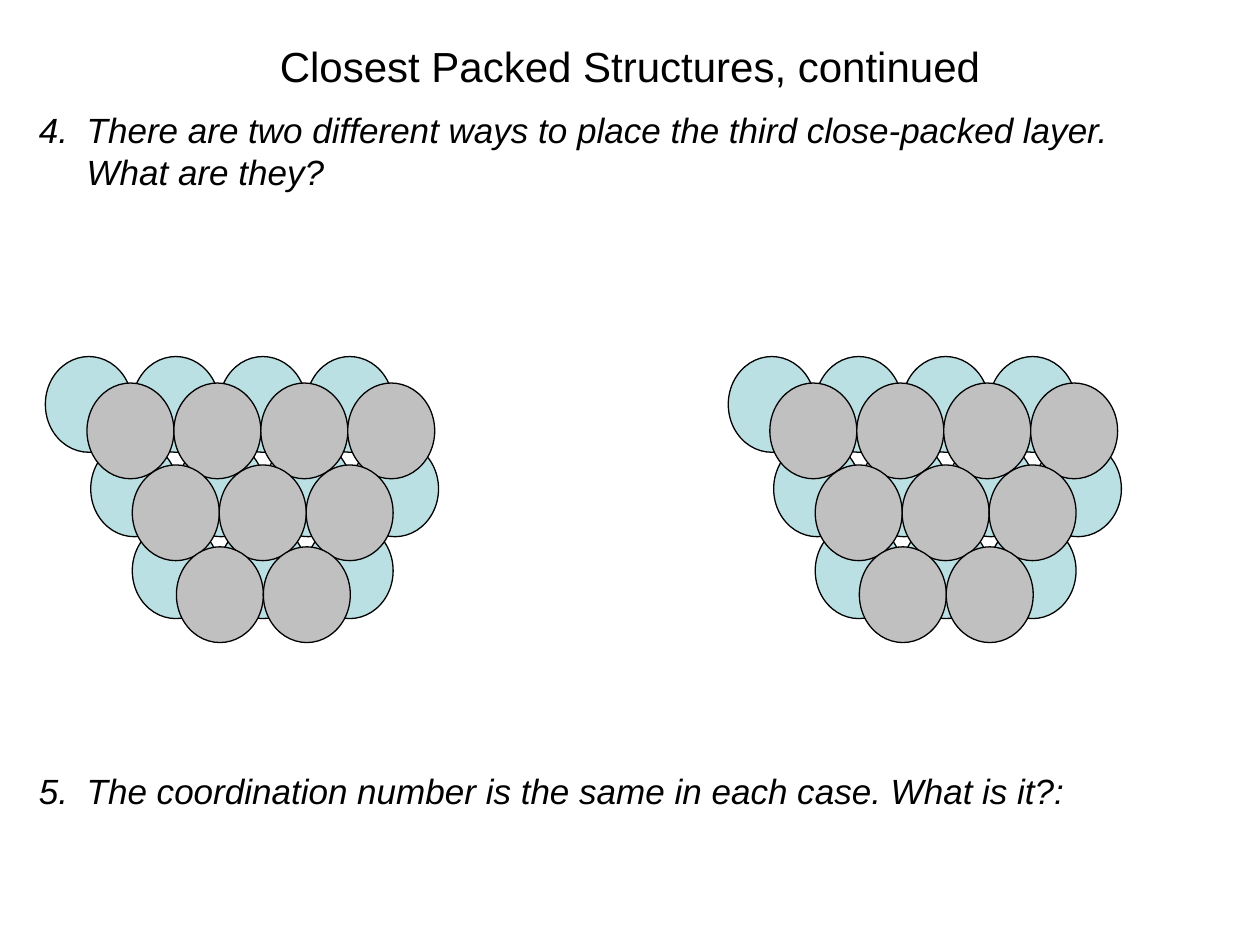
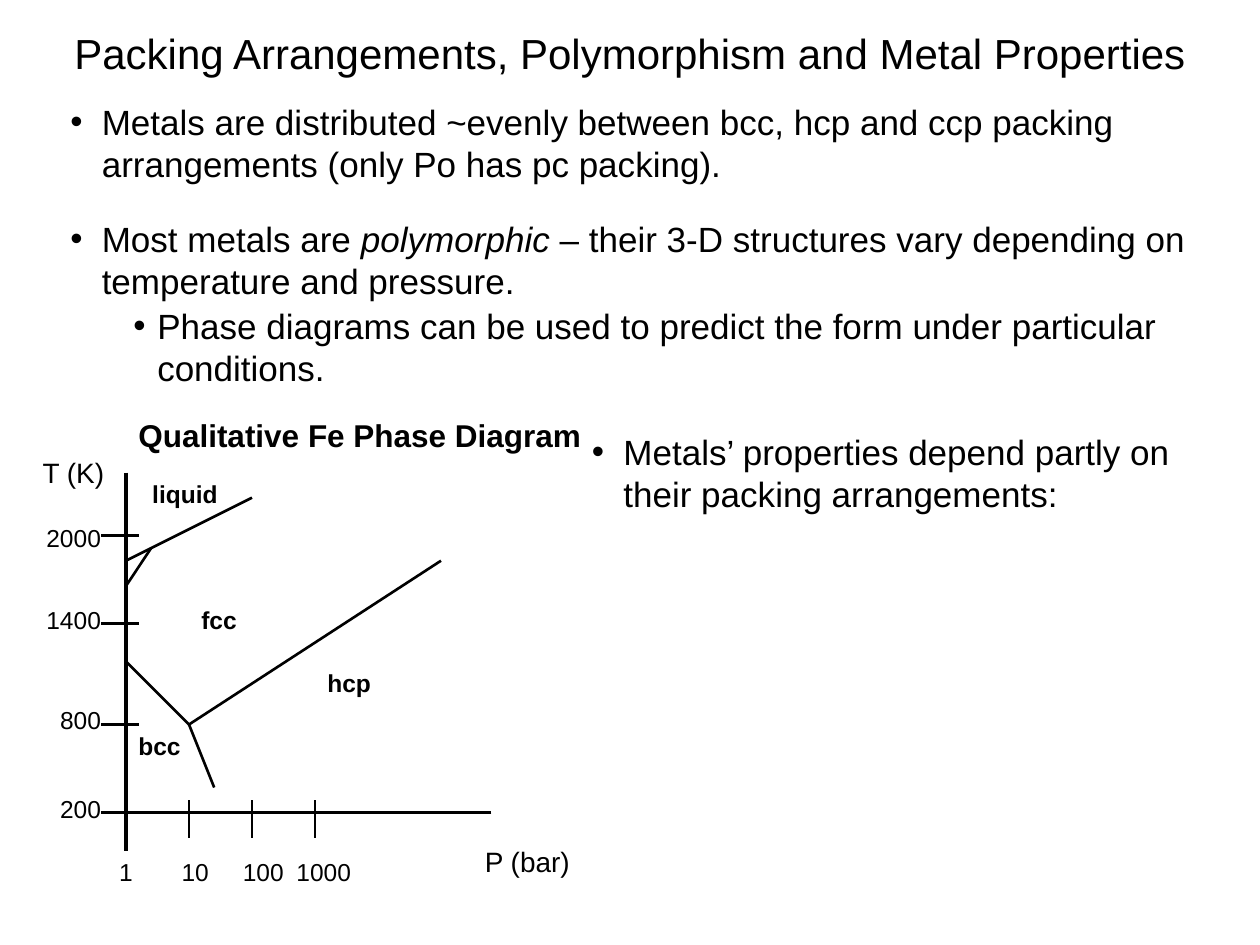
"""Build two slides on closest packed structures and metal polymorphism."""
from dataclasses import dataclass

from lxml.etree import SubElement
from pptx import Presentation
from pptx.dml.color import RGBColor
from pptx.enum.shapes import MSO_CONNECTOR, MSO_SHAPE
from pptx.enum.text import MSO_ANCHOR, PP_ALIGN
from pptx.oxml.ns import qn
from pptx.shapes.group import GroupShape
from pptx.slide import Slide
from pptx.text.text import TextFrame, _Paragraph
from pptx.util import Inches, Pt

COLORS = {"ink": "000000", "lower": "BBE0E3", "upper": "C0C0C0"}
FONT = "Arial"
SPHERE_WIDTH, SPHERE_HEIGHT = 0.69, 0.76
AXIS_X, AXIS_Y = 1, 6.45


@dataclass(frozen=True)
class Box:
    left: float
    top: float
    width: float
    height: float


@dataclass(frozen=True)
class Item:
    text: str
    before: float = 2
    emphasis: str = ""
    level: int = 0
    margin: float = 0.25
    hanging: float = 0.25
    italic: bool = False
    numbered_from: int = 0


@dataclass(frozen=True)
class SphereRow:
    left: float
    top: float
    count: int
    color: str


@dataclass(frozen=True)
class Label:
    text: str
    box: Box
    size: float = 14
    bold: bool = False
    align: PP_ALIGN = PP_ALIGN.LEFT


@dataclass(frozen=True)
class Line:
    start: tuple[float, float]
    end: tuple[float, float]
    width: float = 1.5


SPHERE_ROWS = (
    SphereRow(0.36, 2.83, 4, "lower"),
    SphereRow(0.72, 3.5, 4, "lower"),
    SphereRow(1.05, 4.15, 3, "lower"),
    SphereRow(0.69, 3.04, 4, "upper"),
    SphereRow(1.05, 3.69, 3, "upper"),
    SphereRow(1.4, 4.34, 2, "upper"),
)
STACK_OFFSETS = (0, 5.42)

QUESTIONS = (
    Item("There are two different ways to place the third close-packed layer. What are they?",
         margin=0.38, hanging=0.38, italic=True, numbered_from=4),
    Item("The coordination number is the same in each case. What is it?:",
         before=330, margin=0.38, hanging=0.38, italic=True, numbered_from=4),
)
METAL_FACTS = (
    Item("Metals are distributed ~evenly between bcc, hcp and ccp packing "
         "arrangements (only Po has pc packing)."),
    Item("Most metals are polymorphic – their 3-D structures vary depending on "
         "temperature and pressure.", before=18.5, emphasis="polymorphic"),
    Item("Phase diagrams can be used to predict the form under particular conditions.",
         level=1, margin=0.69, hanging=0.19),
)
PROPERTY_FACTS = (Item("Metals’ properties depend partly on their packing arrangements:"),)

AXES = (
    Line((AXIS_X, 3.75), (AXIS_X, 6.75), 2),
    Line((3.9, AXIS_Y), (0.9, AXIS_Y), 2),
)
PHASE_BOUNDARIES = (
    Line((1.5, 5.75), (3.5, 4.45)),
    Line((1.5, 5.75), (1.7, 6.25)),
    Line((1.5, 5.75), (AXIS_X, 5.25)),
    Line((1.2, 4.35), (AXIS_X, 4.65)),
    Line((2, 3.95), (AXIS_X, 4.45)),
)
PRESSURE_TICKS = (1.5, 2, 2.5)
TEMPERATURE_TICKS = (4.25, 4.95, 5.75, 6.45)
TEMPERATURE_LABELS = (("2000", 4.1), ("1400", 4.75), ("800", 5.55), ("200", 6.25))
PRESSURE_LABELS = (("1", 1), ("10", 1.55), ("100", 2.09), ("1000", 2.57))
DIAGRAM_LABELS = (
    Label("T (K)", Box(0.24, 3.57, 0.76, 0.37), 16),
    Label("P (bar)", Box(3.75, 6.65, 1.25, 0.37), 16),
    Label("hcp", Box(2.5, 5.25, 1, 0.33), bold=True),
    Label("fcc", Box(1.5, 4.75, 1, 0.33), bold=True),
    Label("liquid", Box(1.11, 3.75, 0.89, 0.33), bold=True),
    Label("bcc", Box(1, 5.75, 1, 0.33), bold=True),
    Label("Qualitative Fe Phase Diagram", Box(1, 3.25, 3.96, 0.4), 18, bold=True),
)


def color(name: str) -> RGBColor:
    """Return a palette colour."""
    return RGBColor.from_string(COLORS[name])


def style(paragraph: _Paragraph, size: float, bold: bool = False, italic: bool = False) -> None:
    """Set the font of a whole paragraph."""
    font = paragraph.font
    font.name, font.size, font.bold, font.italic = FONT, Pt(size), bold, italic
    font.color.rgb = color("ink")


def add_text_frame(slide: Slide, box: Box) -> TextFrame:
    """Add a wrapping text box and return its text frame."""
    shape = slide.shapes.add_textbox(
        Inches(box.left), Inches(box.top), Inches(box.width), Inches(box.height))
    shape.text_frame.word_wrap = True
    return shape.text_frame


def add_label(slide: Slide, label: Label) -> TextFrame:
    """Add a one-paragraph text box."""
    frame = add_text_frame(slide, label.box)
    paragraph = frame.paragraphs[0]
    paragraph.text = label.text
    paragraph.alignment = label.align
    style(paragraph, label.size, label.bold)
    return frame


def add_title(slide: Slide, text: str, box: Box) -> None:
    """Add a centred slide title."""
    frame = add_label(slide, Label(text, box, 24, align=PP_ALIGN.CENTER))
    frame.vertical_anchor = MSO_ANCHOR.MIDDLE


def set_marker(paragraph: _Paragraph, item: Item) -> None:
    """Give a paragraph its hanging indent and its bullet or number."""
    properties = paragraph._p.get_or_add_pPr()
    properties.set("marL", str(Inches(item.margin)))
    properties.set("indent", str(-Inches(item.hanging)))
    SubElement(properties, qn("a:buFont"), typeface=FONT)
    if item.numbered_from:
        SubElement(properties, qn("a:buAutoNum"), type="arabicPeriod",
                   startAt=str(item.numbered_from))
    else:
        SubElement(properties, qn("a:buChar"), char="•")


def add_list(slide: Slide, items: tuple[Item, ...], box: Box) -> None:
    """Add a text box holding a bulleted or numbered list."""
    frame = add_text_frame(slide, box)
    for index, item in enumerate(items):
        paragraph = frame.add_paragraph() if index else frame.paragraphs[0]
        paragraph.level = item.level
        paragraph.space_before = Pt(item.before)
        set_marker(paragraph, item)
        style(paragraph, 20, italic=item.italic)
        parts = item.text.partition(item.emphasis) if item.emphasis else (item.text,)
        for part in parts:
            run = paragraph.add_run()
            run.text = part
            if part == item.emphasis:
                run.font.italic = True


def add_sphere(group: GroupShape, left: float, top: float, fill: str) -> None:
    """Add one outlined sphere to a stack."""
    sphere = group.shapes.add_shape(MSO_SHAPE.OVAL, Inches(left), Inches(top),
                                    Inches(SPHERE_WIDTH), Inches(SPHERE_HEIGHT))
    sphere.shadow.inherit = False
    sphere.fill.solid()
    sphere.fill.fore_color.rgb = color(fill)
    sphere.line.color.rgb = color("ink")
    sphere.line.width = Pt(0.75)


def add_sphere_stack(slide: Slide, offset: float) -> None:
    """Add two close-packed layers as one group."""
    group = slide.shapes.add_group_shape()
    for row in SPHERE_ROWS:
        for column in range(row.count):
            add_sphere(group, offset + row.left + column * SPHERE_WIDTH, row.top, row.color)


def add_line(slide: Slide, line: Line) -> None:
    """Add a straight line without a shadow."""
    connector = slide.shapes.add_connector(
        MSO_CONNECTOR.STRAIGHT, *(Inches(value) for value in line.start + line.end))
    connector.line.color.rgb = color("ink")
    connector.line.width = Pt(line.width)
    SubElement(connector._element.spPr, qn("a:effectLst"))


def add_phase_diagram(slide: Slide) -> None:
    """Draw the iron phase diagram with its axes, ticks and labels."""
    pressure_ticks = tuple(Line((x, AXIS_Y - 0.1), (x, AXIS_Y + 0.2)) for x in PRESSURE_TICKS)
    temperature_ticks = tuple(
        Line((AXIS_X + 0.1, y), (AXIS_X - 0.2, y)) for y in TEMPERATURE_TICKS)
    for line in AXES + PHASE_BOUNDARIES + pressure_ticks + temperature_ticks:
        add_line(slide, line)
    temperature_labels = tuple(
        Label(text, Box(0.1, top, 0.8, 0.33), align=PP_ALIGN.RIGHT)
        for text, top in TEMPERATURE_LABELS)
    pressure_labels = tuple(
        Label(text, Box(center - 0.4, 6.75, 0.8, 0.33), align=PP_ALIGN.CENTER)
        for text, center in PRESSURE_LABELS)
    for label in temperature_labels + pressure_labels + DIAGRAM_LABELS:
        add_label(slide, label)


def build_structures_slide(slide: Slide) -> None:
    """Fill the slide on stacking the third layer."""
    add_title(slide, "Closest Packed Structures, continued", Box(0.5, 0.18, 9, 0.68))
    add_list(slide, QUESTIONS, Box(0.21, 0.81, 9.24, 5.94))
    for offset in STACK_OFFSETS:
        add_sphere_stack(slide, offset)


def build_polymorphism_slide(slide: Slide) -> None:
    """Fill the slide on polymorphism and the phase diagram."""
    add_title(slide, "Packing Arrangements, Polymorphism and Metal Properties",
              Box(0.25, 0.25, 9.5, 0.34))
    add_list(slide, METAL_FACTS, Box(0.46, 0.75, 9.07, 2.39))
    add_list(slide, PROPERTY_FACTS, Box(4.6, 3.37, 5, 0.77))
    add_phase_diagram(slide)


def main() -> None:
    """Create and save the presentation."""
    presentation = Presentation()
    presentation.slide_width = Inches(10)
    presentation.slide_height = Inches(7.5)
    for build in (build_structures_slide, build_polymorphism_slide):
        build(presentation.slides.add_slide(presentation.slide_layouts[6]))
    presentation.save("out.pptx")


if __name__ == "__main__":
    main()
